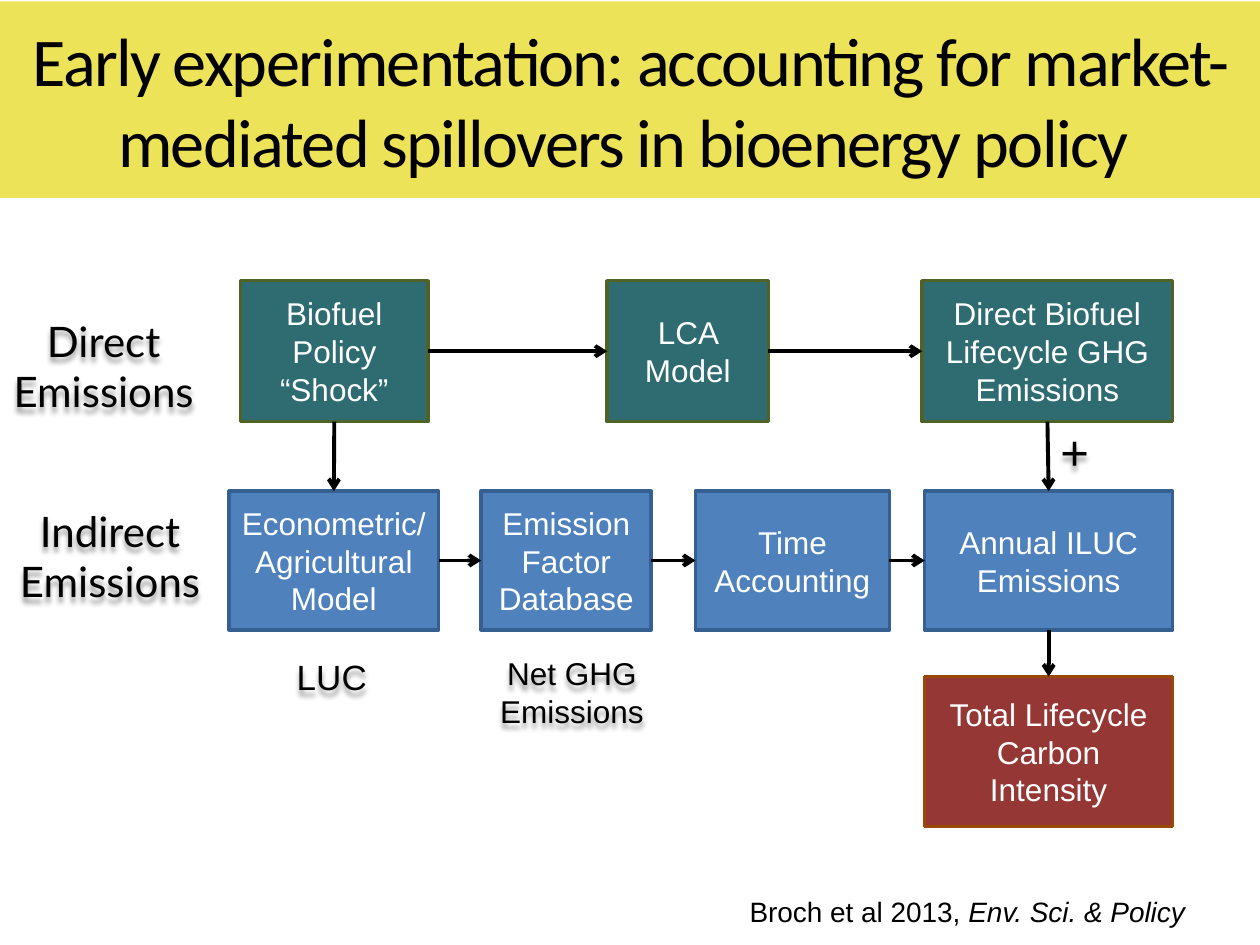
from lxml import etree
from pptx import Presentation
from pptx import util as u
from pptx.dml.color import RGBColor
from pptx.enum import shapes, text
from pptx.oxml import ns


class Theme:
    ink, white = "000000", "FFFFFF"
    gold = "E7DA20"
    teal = ("2F6C71", "4F6228")
    blue = ("4F81BD", "376092")
    red = ("953735", "984807")
    sans, title, side = "Arial", "Calibri", "Lato"
    body, cite, note, label, plus, head = 18, 16, 20, 24, 28, 39


def put(words, x, y, w, h, fill=None, edge=None, size=Theme.body, font=Theme.sans,
        ink=Theme.ink, align=text.PP_ALIGN.CENTER, glow=False, space=None):
    area = [u.Cm(n) for n in (x, y, w, h)]
    if fill:
        box = slide.shapes.add_shape(shapes.MSO_SHAPE.RECTANGLE, *area)
        box.fill.solid()
        box.fill.fore_color.rgb = RGBColor.from_string(fill)
        box.line.fill.background()
    else:
        box = slide.shapes.add_textbox(*area)
    if edge:
        box.line.color.rgb = RGBColor.from_string(edge)
        box.line.width = u.Pt(2)
    box.shadow.inherit = False
    if glow:
        fx = box._element.spPr.find(ns.qn("a:effectLst"))
        shade = etree.SubElement(fx, ns.qn("a:outerShdw"), blurRad="38100",
                                 dist="38100", dir="5400000", rotWithShape="0")
        tone = etree.SubElement(shade, ns.qn("a:srgbClr"), val=Theme.ink)
        etree.SubElement(tone, ns.qn("a:alpha"), val="40000")
    frame = box.text_frame
    frame.word_wrap = True
    frame.margin_left = frame.margin_right = u.Cm(0.23)
    frame.vertical_anchor = text.MSO_ANCHOR.MIDDLE
    para = frame.paragraphs[0]
    para.alignment = align
    for i, part in enumerate(words.split("*")):
        run = para.add_run()
        run.text = part
        run.font.size, run.font.name = u.Pt(size), font
        run.font.color.rgb = RGBColor.from_string(ink)
        if i % 2:
            run.font.italic = True
        if space:
            run._r.get_or_add_rPr().set("spc", str(space))
    return box


prs = Presentation()
prs.slide_width, prs.slide_height = u.Cm(25.4), u.Cm(19.05)
slide = prs.slides.add_slide(prs.slide_layouts[6])

put("Early experimentation: accounting for market-mediated spillovers in bioenergy policy ",
    0, 0.03, 25.4, 3.96, fill=Theme.gold, size=Theme.head, font=Theme.title, space=-100)
band = slide.shapes[0]._element.spPr.find(".//" + ns.qn("a:srgbClr"))
etree.SubElement(band, ns.qn("a:alpha"), val="74000")

rows = [
    (5.66, 2.84, Theme.teal, [
        ("Biofuel Policy “Shock”", 4.85, 3.78),
        ("LCA Model", 12.24, 3.25),
        ("Direct Biofuel Lifecycle GHG Emissions", 18.59, 5.05)]),
    (9.9, 2.8, Theme.blue, [
        ("Econometric/ Agricultural Model", 4.62, 4.22),
        ("Emission Factor Database", 9.7, 3.43),
        ("Time Accounting", 14.02, 3.91),
        ("Annual ILUC Emissions", 18.64, 5)]),
    (13.64, 3.02, Theme.red, [
        ("Total Lifecycle Carbon Intensity", 18.64, 5)]),
]
grid = []
for y, h, (fill, edge), cells in rows:
    grid.append([put(words, x, y, w, h, fill=fill, edge=edge, ink=Theme.white)
                 for words, x, w in cells])

top, left, base, right = range(4)
direct, indirect, total = grid
links = [(a, right, b, left) for row in grid for a, b in zip(row, row[1:])]
links += [(a, base, b, top) for a, b in (
    (direct[0], indirect[0]), (direct[-1], indirect[-1]), (indirect[-1], total[0]))]
for a, start, b, end in links:
    line = slide.shapes.add_connector(shapes.MSO_CONNECTOR.STRAIGHT, 0, 0, 0, 0)
    line.begin_connect(a, start)
    line.end_connect(b, end)
    line.line.color.rgb = RGBColor.from_string(Theme.ink)
    line.line.width = u.Pt(2.25)
    etree.SubElement(line.line._get_or_add_ln(), ns.qn("a:tailEnd"), type="arrow")
    etree.SubElement(line._element.spPr, ns.qn("a:effectLst"))

for words, x, y, w, h, size, font in (
        ("Direct Emissions", -0.36, 6.25, 4.9, 2.24, Theme.label, Theme.side),
        ("Indirect Emissions", -0.23, 10.08, 4.9, 2.24, Theme.label, Theme.side),
        ("Net GHG Emissions", 9.75, 12.83, 3.56, 2.24, Theme.body, Theme.sans),
        ("LUC", 5.46, 13.11, 2.46, 1.07, Theme.note, Theme.sans),
        ("+", 20.52, 8.38, 2.29, 1.42, Theme.plus, Theme.sans)):
    put(words, x, y, w, h, size=size, font=font, glow=True)

put("Broch et al 2013, *Env. Sci. & Policy", 14.88, 17.91, 9.35, 0.94,
    size=Theme.cite, align=text.PP_ALIGN.LEFT)

prs.save("out.pptx")
